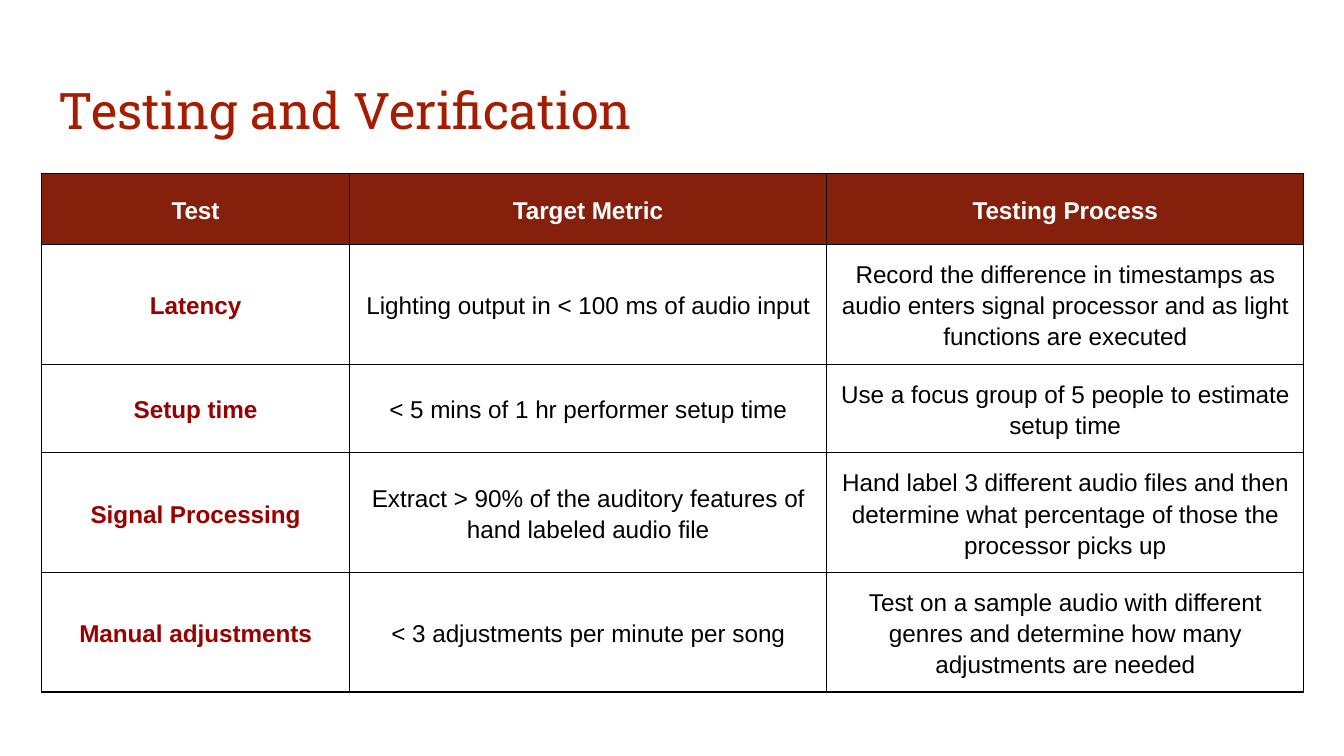
"""Build the Testing and Verification slide with its table of tests."""
from dataclasses import dataclass

from lxml import etree
from pptx import Presentation
from pptx.dml.color import RGBColor
from pptx.enum.text import MSO_ANCHOR, PP_ALIGN
from pptx.oxml.ns import qn
from pptx.util import Inches, Pt

TOP = MSO_ANCHOR.TOP
MIDDLE = MSO_ANCHOR.MIDDLE
CENTER = PP_ALIGN.CENTER

TITLE_RED = RGBColor(0xA6, 0x1C, 0x00)
HEADER_RED = RGBColor(0x85, 0x20, 0x0C)
LABEL_RED = RGBColor(0x99, 0x00, 0x00)
BLACK = RGBColor(0x00, 0x00, 0x00)
WHITE = RGBColor(0xFF, 0xFF, 0xFF)

SLIDE_WIDTH = 10
SLIDE_HEIGHT = SLIDE_WIDTH * 9 / 16
BORDER_TAGS = ("a:lnL", "a:lnR", "a:lnT", "a:lnB")
BORDER_WIDTH = Pt(0.75)
COLUMN_WIDTHS = (2.29, 3.55, 3.55)
ROW_HEIGHTS = (0.53, 0.89, 0.66, 0.89, 0.89)


@dataclass(frozen=True)
class TestRow:
    test: str
    metric: str
    process: str


@dataclass(frozen=True)
class CellStyle:
    fill: RGBColor
    color: RGBColor
    bold: bool


HEADER_STYLE = CellStyle(HEADER_RED, WHITE, True)
LABEL_STYLE = CellStyle(WHITE, LABEL_RED, True)
BODY_STYLE = CellStyle(WHITE, BLACK, False)

HEADER = TestRow("Test", "Target Metric", "Testing Process")
TESTS = (
    TestRow(
        "Latency",
        "Lighting output in < 100 ms of audio input",
        "Record the difference in timestamps as audio enters signal processor "
        "and as light functions are executed",
    ),
    TestRow(
        "Setup time",
        "< 5 mins of 1 hr performer setup time",
        "Use a focus group of 5 people to estimate setup time",
    ),
    TestRow(
        "Signal Processing",
        "Extract > 90% of the auditory features of hand labeled audio file",
        "Hand label 3 different audio files and then determine what percentage "
        "of those the processor picks up",
    ),
    TestRow(
        "Manual adjustments",
        "< 3 adjustments per minute per song",
        "Test on a sample audio with different genres and determine how many "
        "adjustments are needed",
    ),
)


def add_run(paragraph, text: str, font_name: str, size: float, color: RGBColor, bold: bool) -> None:
    run = paragraph.add_run()
    run.text = text
    run.font.name = font_name
    run.font.size = Pt(size)
    run.font.bold = bold
    run.font.color.rgb = color


def add_title(slide, text: str) -> None:
    title = slide.shapes.add_textbox(Inches(0.34), Inches(0.49), Inches(9.32), Inches(0.63))
    frame = title.text_frame
    frame.word_wrap = True
    frame.vertical_anchor = TOP
    frame.margin_left = frame.margin_right = Inches(0.1)
    frame.margin_top = frame.margin_bottom = Inches(0.1)
    add_run(frame.paragraphs[0], text, "Roboto Slab", 27, TITLE_RED, False)


def add_borders(cell) -> None:
    properties = cell._tc.get_or_add_tcPr()
    for index, tag in enumerate(BORDER_TAGS):
        line = etree.Element(qn(tag), w=str(int(BORDER_WIDTH)))
        fill = etree.SubElement(line, qn("a:solidFill"))
        etree.SubElement(fill, qn("a:srgbClr"), val=str(BLACK))
        properties.insert(index, line)


def fill_cell(cell, text: str, style: CellStyle) -> None:
    cell.fill.solid()
    cell.fill.fore_color.rgb = style.fill
    cell.vertical_anchor = MIDDLE
    cell.margin_left = cell.margin_right = Inches(0.03)
    cell.margin_top = cell.margin_bottom = Inches(0.02)
    paragraph = cell.text_frame.paragraphs[0]
    paragraph.alignment = CENTER
    paragraph.line_spacing = 1.15
    add_run(paragraph, text, "Arial", 13, style.color, style.bold)
    add_borders(cell)


def add_test_table(slide) -> None:
    table = slide.shapes.add_table(
        len(ROW_HEIGHTS), len(COLUMN_WIDTHS), Inches(0.31), Inches(1.29),
        Inches(sum(COLUMN_WIDTHS)), Inches(sum(ROW_HEIGHTS)),
    ).table
    for column, width in zip(table.columns, COLUMN_WIDTHS):
        column.width = Inches(width)
    for row, height in zip(table.rows, ROW_HEIGHTS):
        row.height = Inches(height)

    header_styles = (HEADER_STYLE,) * len(COLUMN_WIDTHS)
    test_styles = (LABEL_STYLE, BODY_STYLE, BODY_STYLE)
    for row, entry in zip(table.rows, (HEADER, *TESTS)):
        styles = header_styles if entry is HEADER else test_styles
        texts = (entry.test, entry.metric, entry.process)
        for cell, text, style in zip(row.cells, texts, styles):
            fill_cell(cell, text, style)


def main() -> None:
    presentation = Presentation()
    presentation.slide_width = Inches(SLIDE_WIDTH)
    presentation.slide_height = Inches(SLIDE_HEIGHT)
    slide = presentation.slides.add_slide(presentation.slide_layouts[6])
    slide.background.fill.solid()
    slide.background.fill.fore_color.rgb = WHITE
    add_title(slide, "Testing and Verification")
    add_test_table(slide)
    presentation.save("out.pptx")


if __name__ == "__main__":
    main()
